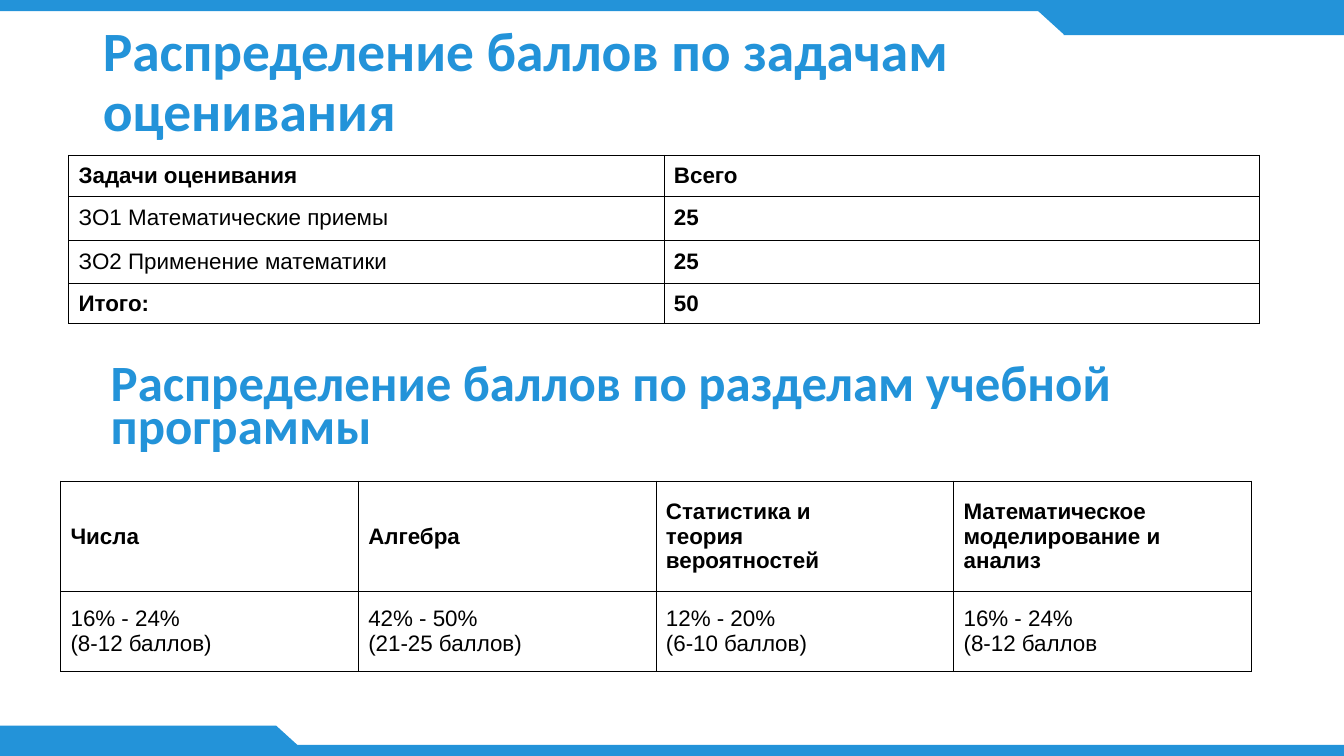
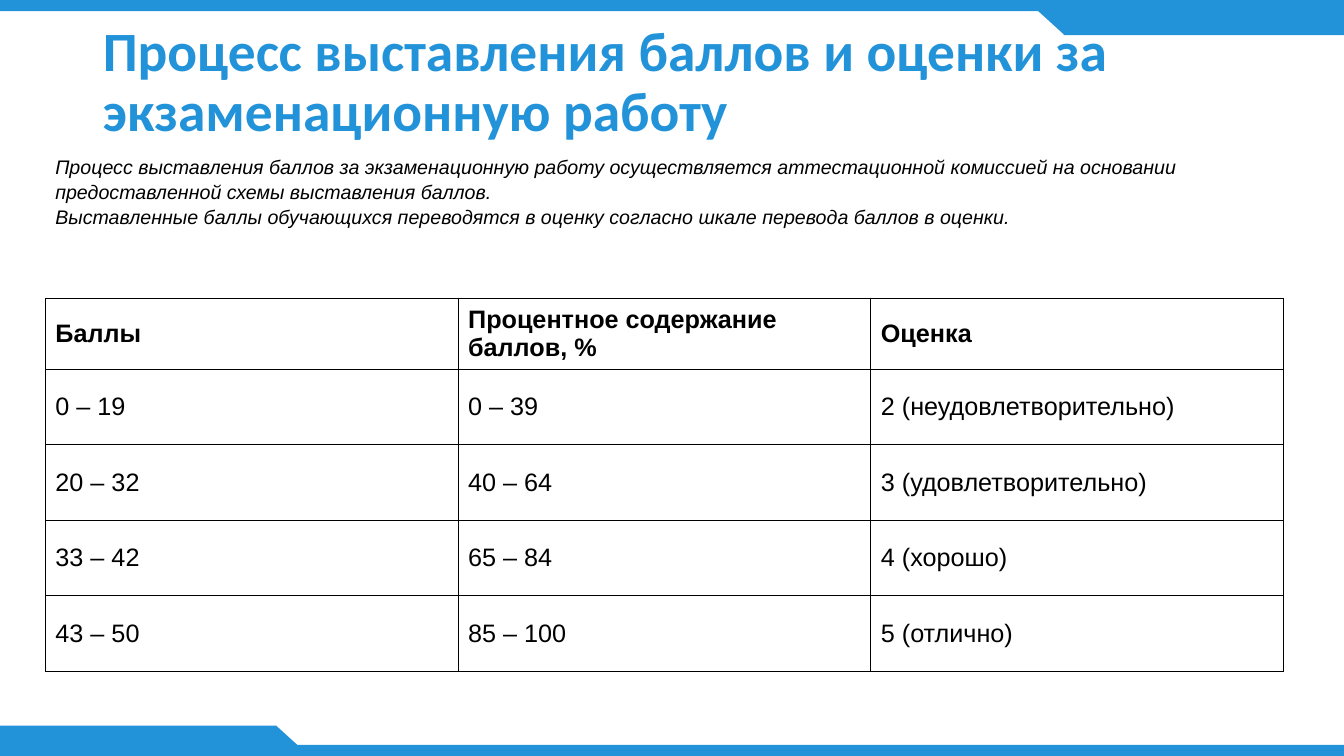
from lxml import etree
from pptx import Presentation
from pptx.dml.color import RGBColor
from pptx.enum.shapes import MSO_SHAPE
from pptx.enum.text import MSO_ANCHOR, MSO_AUTO_SIZE, PP_ALIGN
from pptx.oxml.ns import qn
from pptx.util import Inches, Pt

COLORS = {"blue": "2393D9", "black": "000000"}

prs = Presentation()
prs.slide_width, prs.slide_height = Inches(13.33), Inches(7.5)
layout = prs.slide_layouts[5]


def add_heading(shape, text, size, spacing):
    tf = shape.text_frame
    tf.word_wrap = True
    tf.auto_size = MSO_AUTO_SIZE.NONE
    tf.vertical_anchor = MSO_ANCHOR.MIDDLE
    tf.text = text
    p = tf.paragraphs[0]
    p.alignment = PP_ALIGN.LEFT
    p.line_spacing = spacing
    p.font.name, p.font.size, p.font.bold = "Calibri", Pt(size), True
    p.font.color.rgb = RGBColor.from_string(COLORS["blue"])


def add_grid(s, left, top, width, heights, rows, size, bold_rows, bold_cols=()):
    cols = len(rows[0])
    frame = s.shapes.add_table(len(rows), cols, Inches(left), Inches(top),
                               Inches(width), Inches(sum(heights)))
    table = frame.table
    table.first_row = table.horz_banding = False
    for col in table.columns:
        col.width = Inches(width / cols)
    for i, values in enumerate(rows):
        table.rows[i].height = Inches(heights[i])
        for j, value in enumerate(values):
            cell = table.cell(i, j)
            cell.text = value
            cell.vertical_anchor = MSO_ANCHOR.MIDDLE
            font = cell.text_frame.paragraphs[0].font
            font.name, font.size = "Arial", Pt(size)
            font.bold = i in bold_rows or j in bold_cols
            font.color.rgb = RGBColor.from_string(COLORS["black"])
            # Thin black borders come before the fill in the cell properties
            tcPr = cell._tc.get_or_add_tcPr()
            for side in ("a:lnL", "a:lnR", "a:lnT", "a:lnB"):
                ln = etree.SubElement(tcPr, qn(side), w=str(Pt(0.5)))
                fill = etree.SubElement(ln, qn("a:solidFill"))
                etree.SubElement(fill, qn("a:srgbClr"), val=COLORS["black"])
            cell.fill.background()


# Slides and their titles
titles = ["Распределение баллов по задачам оценивания",
          "Процесс выставления баллов и оценки за экзаменационную работу"]
slides = [prs.slides.add_slide(layout) for _ in titles]

# Shared bands, kept on the layout
bands = [
    (MSO_SHAPE.RECTANGLE, 0, 0, 13.33, 0.11, 0),
    (MSO_SHAPE.RECTANGLE, 0, 7.39, 13.33, 0.11, 0),
    (MSO_SHAPE.RECTANGLE, 10.55, 0.05, 2.78, 0.3, 0),
    (MSO_SHAPE.FLOWCHART_MERGE, 10.22, 0.04, 0.66, 0.3, 0),
    (MSO_SHAPE.RECTANGLE, 0, 7.2, 2.74, 0.3, 0),
    (MSO_SHAPE.FLOWCHART_MERGE, 2.41, 7.2, 0.66, 0.3, 180),
]
for kind, x, y, w, h, rotation in bands:
    band = slides[0].shapes.add_shape(kind, Inches(x), Inches(y), Inches(w), Inches(h))
    band.shadow.inherit = False
    band.fill.solid()
    band.fill.fore_color.rgb = RGBColor.from_string(COLORS["blue"])
    band.line.fill.background()
    band.rotation = rotation
    layout.shapes._spTree.insert(2, band._element)

for s, text in zip(slides, titles):
    title = s.shapes.title
    title.left, title.top = Inches(0.92), Inches(0.2)
    title.width, title.height = Inches(11.5), Inches(1.25)
    add_heading(title, text, 39.6, 0.9)

# Slide 1: marks by objective and by section
s = slides[0]
objectives = [
    ("Задачи оценивания", "Всего"),
    ("ЗO1 Математические приемы", "25"),
    ("ЗO2 Применение математики", "25"),
    ("Итого:", "50"),
]
add_grid(s, 0.68, 1.54, 11.81, [0.41, 0.43, 0.43, 0.4], objectives, 16, (0, 3), (1,))

subtitle = s.shapes.add_textbox(Inches(1), Inches(3.57), Inches(11.5), Inches(1))
add_heading(subtitle, "Распределение баллов по разделам учебной программы", 36.3, 0.7)

sections = [
    ("Числа", "Алгебра", "Статистика и\vтеория\vвероятностей",
     "Математическое\vмоделирование и\vанализ"),
    ("16% - 24%\v(8-12 баллов)", "42% - 50%\v(21-25 баллов)",
     "12% - 20%\v(6-10 баллов)", "16% - 24%\v(8-12 баллов"),
]
add_grid(s, 0.6, 4.77, 11.81, [1.1, 0.79], sections, 16, (0,))

# Slide 2: note and grade scale
s = slides[1]
note = s.shapes.add_textbox(Inches(0.45), Inches(1.48), Inches(11.44), Inches(0.8))
tf = note.text_frame
tf.word_wrap = False
tf.text = ("Процесс выставления баллов за экзаменационную работу осуществляется "
           "аттестационной комиссией на основании\n"
           "предоставленной схемы выставления баллов.\n"
           "Выставленные баллы обучающихся переводятся в оценку согласно "
           "шкале перевода баллов в оценки.")
for p in tf.paragraphs:
    p.alignment = PP_ALIGN.LEFT
    p.line_spacing = 1.05
    p.font.name, p.font.size, p.font.italic = "Arial", Pt(14), True
    p.font.color.rgb = RGBColor.from_string(COLORS["black"])

grades = [
    ("Баллы", "Процентное содержание\vбаллов, %", "Оценка"),
    ("0 – 19", "0 – 39", "2 (неудовлетворительно)"),
    ("20 – 32", "40 – 64", "3 (удовлетворительно)"),
    ("33 – 42", "65 – 84", "4 (хорошо)"),
    ("43 – 50", "85 – 100", "5 (отлично)"),
]
add_grid(s, 0.45, 2.96, 12.28, [0.66] + [0.75] * 4, grades, 18, (0,))

prs.save("out.pptx")
